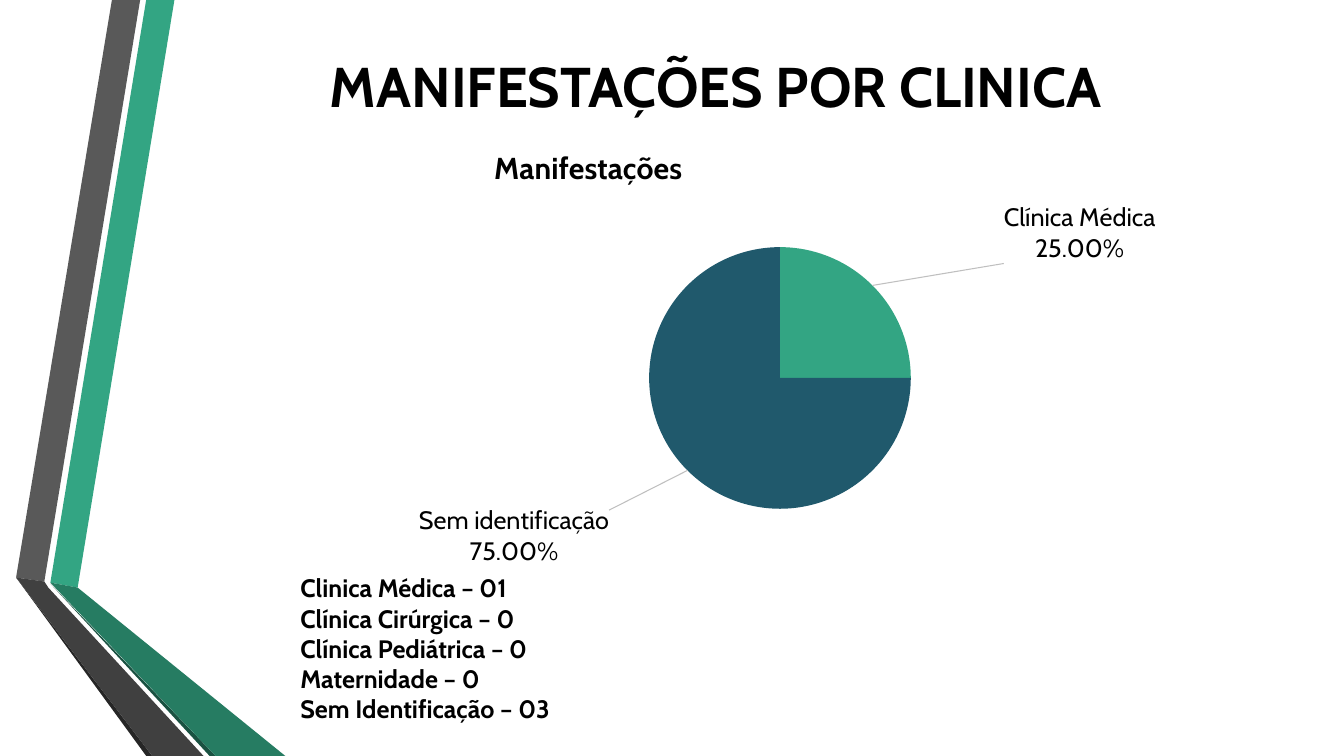
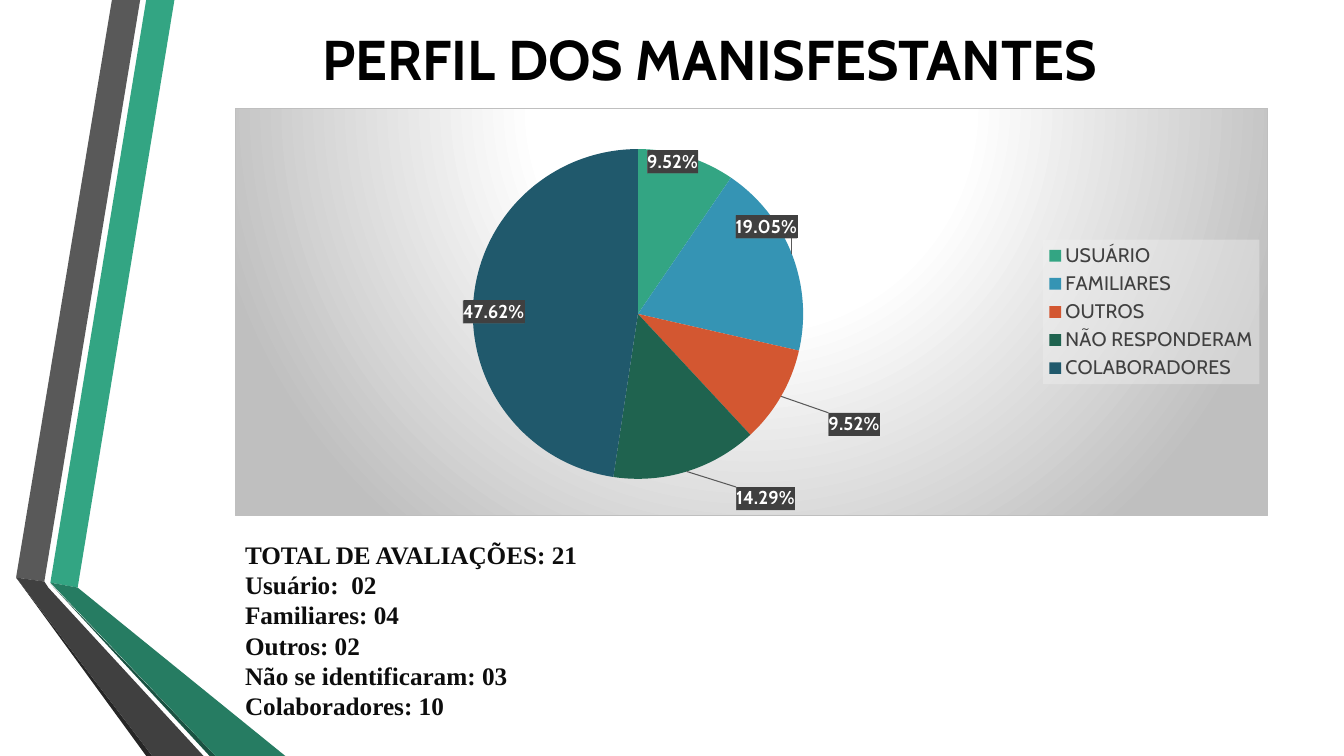
"""Build two slides of complaint statistics, each with a pie chart and a list."""
from copy import deepcopy
from dataclasses import dataclass
from typing import Optional

from pptx import Presentation
from pptx.chart.data import CategoryChartData
from pptx.dml.color import RGBColor
from pptx.enum.chart import XL_CHART_TYPE, XL_LABEL_POSITION, XL_LEGEND_POSITION
from pptx.enum.text import MSO_ANCHOR, MSO_AUTO_SIZE, PP_ALIGN
from pptx.oxml import parse_xml
from pptx.oxml.ns import nsdecls, qn
from pptx.oxml.xmlchemy import OxmlElement
from pptx.util import Inches, Pt

PIE = XL_CHART_TYPE.PIE
LABEL_OUTSIDE = XL_LABEL_POSITION.OUTSIDE_END
LABEL_CENTER = XL_LABEL_POSITION.CENTER
LEGEND_RIGHT = XL_LEGEND_POSITION.RIGHT
MIDDLE, TOP = MSO_ANCHOR.MIDDLE, MSO_ANCHOR.TOP
CENTER, LEFT = PP_ALIGN.CENTER, PP_ALIGN.LEFT
NO_FIT = MSO_AUTO_SIZE.NONE

SLIDE_W, SLIDE_H = Inches(13.333), Inches(7.5)
COL, ROW = SLIDE_W / 100, SLIDE_H / 100
FONT = "Cabin"
SERIF = "Times New Roman"

BLACK = RGBColor(0x00, 0x00, 0x00)
INK = RGBColor(0x0D, 0x0D, 0x0D)
WHITE = RGBColor(0xFF, 0xFF, 0xFF)
SOOT = RGBColor(0x26, 0x26, 0x26)
CHARCOAL = RGBColor(0x40, 0x40, 0x40)
GRAY = RGBColor(0x59, 0x59, 0x59)
SILVER = RGBColor(0xBF, 0xBF, 0xBF)
PALE = RGBColor(0xF2, 0xF2, 0xF2)
GREEN = RGBColor(0x33, 0xA5, 0x83)
MID_GREEN = RGBColor(0x26, 0x7C, 0x62)
DEEP_GREEN = RGBColor(0x1A, 0x52, 0x42)
SLICES = (GREEN, RGBColor(0x35, 0x94, 0xB4), RGBColor(0xD3, 0x57, 0x31),
          RGBColor(0x1F, 0x63, 0x4F), RGBColor(0x20, 0x59, 0x6C))

SP_PR = f'<c:spPr {nsdecls("c", "a")}>%s</c:spPr>'
LEADER = (f'<c:leaderLines {nsdecls("c", "a")}><c:spPr><a:ln w="9525"><a:solidFill>'
          '<a:srgbClr val="%s"/></a:solidFill></a:ln></c:spPr></c:leaderLines>')
BACKDROP = SP_PR % (
    f'<a:gradFill><a:gsLst><a:gs pos="0"><a:srgbClr val="{WHITE}"/></a:gs>'
    f'<a:gs pos="39000"><a:srgbClr val="{WHITE}"/></a:gs>'
    f'<a:gs pos="100000"><a:srgbClr val="{SILVER}"/></a:gs></a:gsLst>'
    '<a:path path="circle"><a:fillToRect l="50000" t="-80000" r="50000" b="180000"/>'
    f'</a:path></a:gradFill><a:ln w="9525"><a:solidFill><a:srgbClr val="{SILVER}"/>'
    '</a:solidFill></a:ln>')
LABEL_FILL = SP_PR % (
    f'<a:pattFill prst="dkVert"><a:fgClr><a:srgbClr val="{CHARCOAL}"/></a:fgClr>'
    f'<a:bgClr><a:srgbClr val="{GRAY}"/></a:bgClr></a:pattFill>')
LEGEND_FILL = SP_PR % (f'<a:solidFill><a:srgbClr val="{PALE}">'
                       '<a:alpha val="39000"/></a:srgbClr></a:solidFill>')


@dataclass(frozen=True)
class Box:
    """Place and size in hundredths of the slide."""
    x: float
    y: float
    w: float
    h: float

    def emu(self) -> tuple[int, int, int, int]:
        """Return left, top, width and height in EMU."""
        return (round(self.x * COL), round(self.y * ROW),
                round(self.w * COL), round(self.h * ROW))


@dataclass(frozen=True)
class Ribbon:
    """One flat piece of the folded side ribbon."""
    color: RGBColor
    points: tuple[tuple[float, float], ...]


@dataclass(frozen=True)
class Pie:
    """Data and look of a pie chart; an offset of None hides its label."""
    box: Box
    plot: tuple[float, float, float, float]
    name: str
    slices: tuple[tuple[str, float], ...]
    offsets: tuple[Optional[tuple[float, float]], ...]
    label_size: float
    label_color: RGBColor
    titled: bool


@dataclass(frozen=True)
class Page:
    """Content of one slide."""
    title: str
    title_box: Box
    pie: Pie
    lines: tuple[str, ...]
    list_box: Box
    list_font: str
    list_color: RGBColor


RIBBONS = (
    Ribbon(GREEN, ((3.75, 77.07), (5.78, 77.73), (12.98, 0), (10.88, 0))),
    Ribbon(GRAY, ((10.43, 0), (8.33, 0), (1.2, 76.4), (3.3, 76.93))),
    Ribbon(SOOT, ((1.2, 76.4), (10.88, 100), (11.33, 100))),
    Ribbon(DEEP_GREEN, ((3.75, 77.2), (15.6, 100), (16.05, 100))),
    Ribbon(MID_GREEN, ((3.75, 77.07), (16.05, 100), (21.23, 100), (5.78, 77.73))),
    Ribbon(CHARCOAL, ((15.15, 100), (3.6, 77.73), (3.3, 76.93), (1.2, 76.4),
                      (11.33, 100))),
)

PAGES = (
    Page("MANIFESTAÇÕES POR CLINICA", Box(12.15, 3.6, 82.2, 15.33),
         Pie(Box(16.65, 16.27, 78.83, 58.67), (0.4, 0.28, 0.25, 0.59), "Manifestações",
             (("Clínica Médica", 25), ("Clínica Cirurgica", 0),
              ("Clinica Pediátrica", 0), ("Maternidade", 0),
              ("Sem identificação", 75)),
             ((0.12, -0.04), None, None, None, (-0.07, 0.08)), 18, BLACK, True),
         ("Clinica Médica – 01", "Clínica Cirúrgica – 0", "Clínica Pediátrica – 0",
          "Maternidade – 0", "Sem Identificação – 03"),
         Box(21.6, 75.07, 63.3, 24), FONT, BLACK),
    Page("PERFIL DOS MANISFESTANTES ", Box(12.15, 1.2, 82.2, 13.07),
         Pie(Box(17.48, 14.27, 76.88, 54), (0.23, 0.1, 0.32, 0.81), "Series 1",
             (("USUÁRIO", 9.52), ("FAMILIARES", 19.05), ("OUTROS", 9.52),
              ("NÃO RESPONDERAM", 14.29), ("COLABORADORES", 47.62)),
             ((0.01, -0.18), (0.05, -0.14), (0.14, 0.17), (0.1, 0.26), (-0.06, 0.01)),
             13.3, WHITE, False),
         ("TOTAL DE AVALIAÇÕES: 21", "Usuário:  02", "Familiares: 04", "Outros: 02",
          "Não se identificaram: 03", "Colaboradores: 10"),
         Box(17.48, 70.67, 29.85, 29), SERIF, INK),
)


def set_font(font, size: float, color: RGBColor, bold: bool, name: str = FONT) -> None:
    """Format a font."""
    font.size, font.bold, font.name = Pt(size), bold, name
    font.color.rgb = color


def add_ribbons(slide, layout) -> None:
    """Draw the side ribbon and hand it to the layout shared by all slides."""
    for number, ribbon in enumerate(RIBBONS, 20):
        points = [(round(x * COL), round(y * ROW)) for x, y in ribbon.points]
        builder = slide.shapes.build_freeform(*points[0])
        builder.add_line_segments(points[1:], close=True)
        sp = builder.convert_to_shape()
        sp.shadow.inherit = False
        sp.fill.solid()
        sp.fill.fore_color.rgb = ribbon.color
        sp.line.fill.background()
        sp.element.nvSpPr.cNvPr.set("id", str(number))
        layout.shapes.element.append(sp.element)


def fill_placeholder(sp, box: Box, lines: tuple[str, ...], size: float,
                     color: RGBColor, font: str, align, anchor) -> None:
    """Move a placeholder and write plain bold paragraphs into it."""
    sp.left, sp.top, sp.width, sp.height = box.emu()
    tf = sp.text_frame
    tf.word_wrap, tf.auto_size, tf.vertical_anchor = True, NO_FIT, anchor
    for i, line in enumerate(lines):
        p = tf.add_paragraph() if i else tf.paragraphs[0]
        p.alignment, p.space_before = align, Pt(0)
        if len(lines) > 1:
            p.line_spacing = Pt(21.6)
            p_pr = p._p.get_or_add_pPr()
            p_pr.set("marL", "0")
            p_pr.set("indent", "0")
            p_pr.append(OxmlElement("a:buNone"))
        r = p.add_run()
        r.text = line
        set_font(r.font, size, color, True, font)


def set_layout(holder, index: int, target: str = "", mode: str = "edge",
               **shares: float) -> None:
    """Give a chart part a manual layout in shares of the chart."""
    for old in holder.findall(qn("c:layout")):
        holder.remove(old)
    parts = [("layoutTarget", target)] if target else []
    if mode == "edge":
        parts += [("xMode", mode), ("yMode", mode)]
    parts += shares.items()
    body = "".join(f'<c:{tag} val="{value}"/>' for tag, value in parts)
    holder.insert(index, parse_xml(f'<c:layout {nsdecls("c")}><c:manualLayout>{body}'
                                   '</c:manualLayout></c:layout>'))


def add_labels(chart, pie: Pie) -> None:
    """Label the slices, each moved by its own offset."""
    labels = chart.plots[0].series[0].data_labels
    set_font(labels.font, pie.label_size, pie.label_color, not pie.titled)
    labels.number_format, labels.number_format_is_linked = "0.00%", False
    labels.show_value, labels.show_percentage = False, True
    labels.show_category_name = pie.titled
    labels.position = LABEL_OUTSIDE if pie.titled else LABEL_CENTER
    root = chart.element.find(".//" + qn("c:ser")).find(qn("c:dLbls"))
    for tag in ("c:showLeaderLines", "c:leaderLines"):
        for old in root.findall(qn(tag)):
            root.remove(old)
    if pie.titled:
        separator = OxmlElement("c:separator")
        separator.text = "\n"
        root.append(separator)
    else:
        root.find(qn("c:numFmt")).addnext(parse_xml(LABEL_FILL))
    shared = list(root)
    for i, offset in enumerate(pie.offsets):
        label = OxmlElement("c:dLbl")
        idx = OxmlElement("c:idx")
        idx.set("val", str(i))
        label.append(idx)
        if offset:
            label.extend(deepcopy(shared))
            set_layout(label, 1, mode="factor", x=offset[0], y=offset[1])
        else:
            delete = OxmlElement("c:delete")
            delete.set("val", "1")
            label.append(delete)
        root.insert(i, label)
    show = OxmlElement("c:showLeaderLines")
    show.set("val", "1")
    root.append(show)
    root.append(parse_xml(LEADER % str(SILVER if pie.titled else GRAY)))


def add_pie(slide, pie: Pie) -> None:
    """Add a pie chart with its title or its legend."""
    data = CategoryChartData()
    data.categories = [name for name, _ in pie.slices]
    data.add_series(pie.name, [value for _, value in pie.slices])
    chart = slide.shapes.add_chart(PIE, *pie.box.emu(), data).chart
    set_font(chart.font, pie.label_size, BLACK, False)
    plot = chart.plots[0]
    plot.vary_by_categories = True
    for i, color in enumerate(SLICES):
        fill = plot.series[0].points[i].format.fill
        fill.solid()
        fill.fore_color.rgb = color
    add_labels(chart, pie)
    root = chart.element
    x, y, w, h = pie.plot
    set_layout(root.find(".//" + qn("c:plotArea")), 0, "inner", x=x, y=y, w=w, h=h)
    chart.has_legend = not pie.titled
    chart.has_title = pie.titled
    if pie.titled:
        r = chart.chart_title.text_frame.paragraphs[0].add_run()
        r.text = pie.name
        set_font(r.font, 21.6, BLACK, True)
        set_layout(root.find(".//" + qn("c:title")), 1, x=0.25, y=0.04)
    else:
        legend = chart.legend
        legend.position, legend.include_in_layout = LEGEND_RIGHT, False
        set_font(legend.font, 14, CHARCOAL, False)
        holder = root.find(".//" + qn("c:legend"))
        holder.find(qn("c:txPr")).addprevious(parse_xml(LEGEND_FILL))
        root.find(qn("c:chart")).addnext(parse_xml(BACKDROP))


def main() -> None:
    """Build and save the presentation."""
    prs = Presentation()
    prs.slide_width, prs.slide_height = SLIDE_W, SLIDE_H
    layout = prs.slide_layouts[1]
    for i, page in enumerate(PAGES):
        slide = prs.slides.add_slide(layout)
        if i == 0:
            add_ribbons(slide, layout)
        fill_placeholder(slide.shapes.title, page.title_box, (page.title,), 40,
                         BLACK, FONT, CENTER, MIDDLE)
        add_pie(slide, page.pie)
        fill_placeholder(slide.placeholders[1], page.list_box, page.lines, 18,
                         page.list_color, page.list_font, LEFT, TOP)
    prs.save("out.pptx")


if __name__ == "__main__":
    main()
